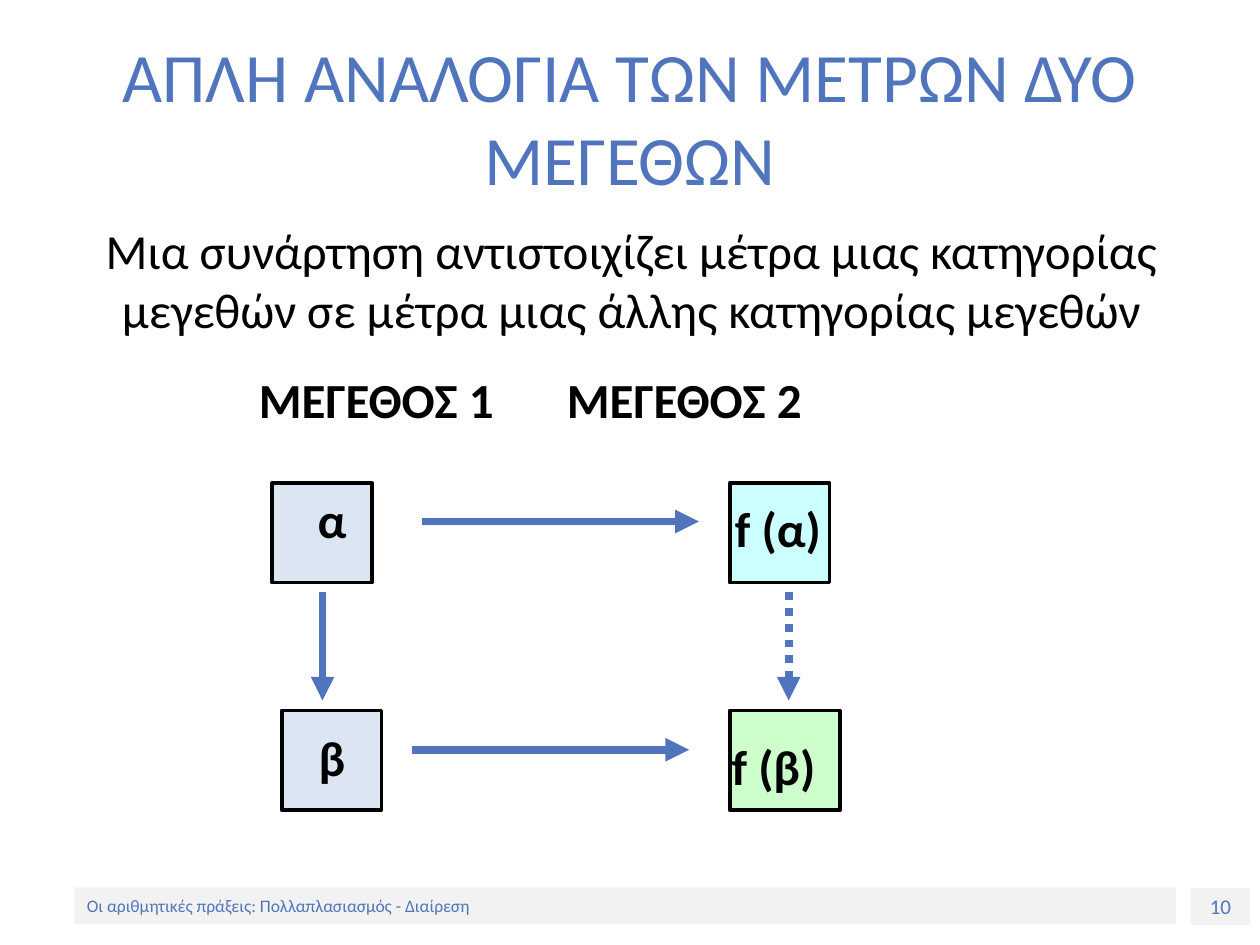
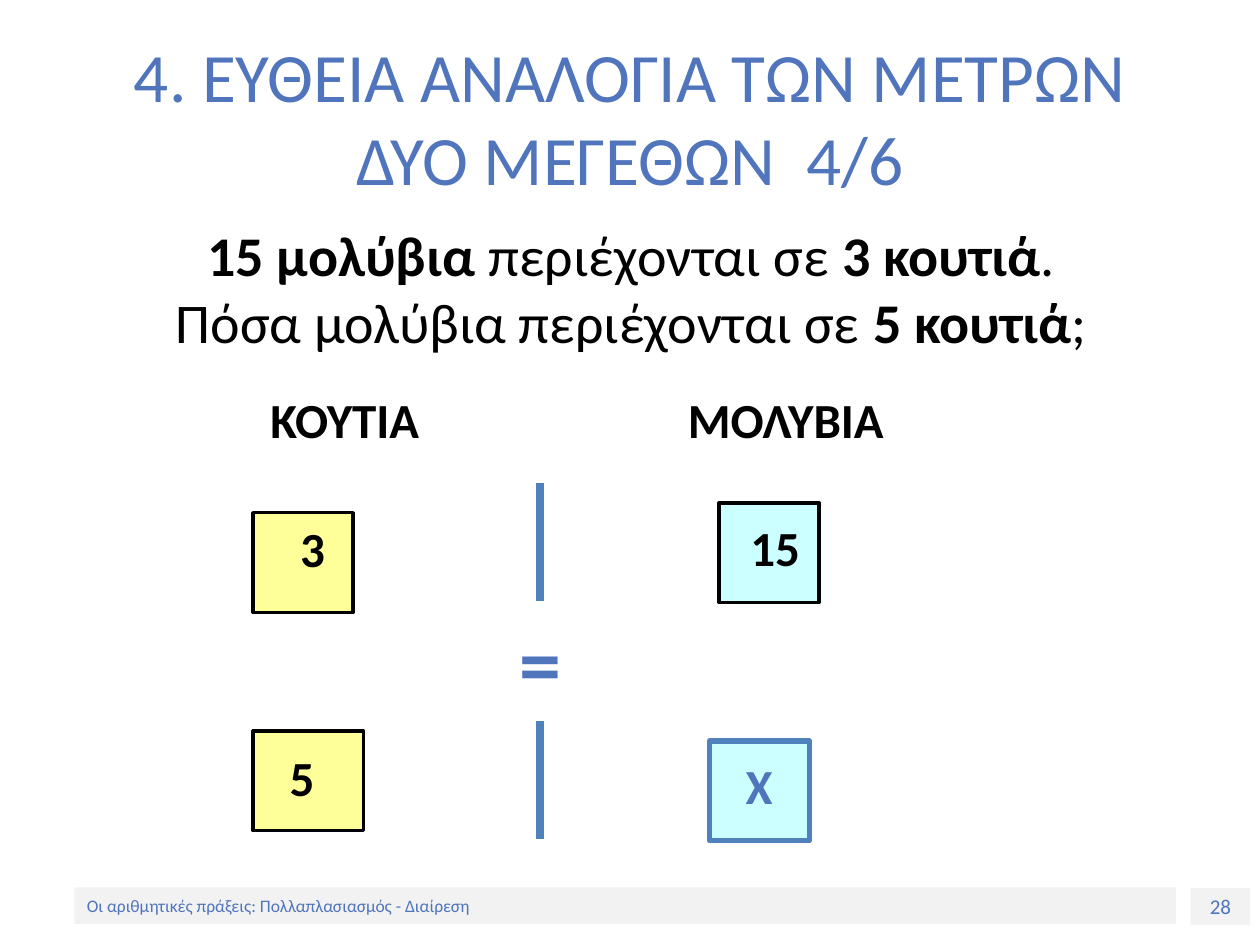
from lxml import etree
from pptx import Presentation
from pptx import util as u
from pptx.dml.color import RGBColor
from pptx.enum import dml, shapes, text
from pptx.oxml.ns import qn

Pt = u.Pt
ACCENT, INK, BAND = "5075BC", "000000", "F2F2F2"
STEEL, PALE, YELLOW, CYAN, GREEN = "4F81BD", "DCE6F2", "FFFF99", "CCFFFF", "CCFFCC"
COURSE = "Οι αριθμητικές πράξεις: Πολλαπλασιασμός - Διαίρεση"
BOX = 57          # side of a value box
LABEL_H = 41      # height of a one-line label


def rgb(value):
    return RGBColor.from_string(value)


class Deck:
    """Shared style plus the slide being filled."""

    font = "Calibri"

    def __init__(self):
        self.prs = Presentation()
        self.prs.slide_width, self.prs.slide_height = Pt(720), Pt(540)
        self.slide = None

    def fill_text(self, frame, lines, size, color, align, anchor):
        """Each line is a plain string or a list of (text, bold) runs."""
        frame.word_wrap = True
        frame.vertical_anchor = anchor
        for i, line in enumerate(lines):
            paragraph = frame.paragraphs[0] if i == 0 else frame.add_paragraph()
            paragraph.alignment = align
            for words, bold in [(line, False)] if isinstance(line, str) else line:
                run = paragraph.add_run()
                run.text = words
                run.font.name, run.font.size, run.font.bold = self.font, Pt(size), bold
                run.font.color.rgb = rgb(color)

    def text(self, area, lines, size, color=INK, anchor=text.MSO_ANCHOR.TOP):
        box = self.slide.shapes.add_textbox(*map(Pt, area))
        self.fill_text(box.text_frame, lines, size, color, text.PP_ALIGN.CENTER, anchor)

    def label(self, center, top, words, size=28, color=INK, width=74):
        self.text((center - width / 2, top, width, LABEL_H), [[(words, True)]], size, color)

    def rect(self, area, fill, line=None, weight=2):
        shape = self.slide.shapes.add_shape(shapes.MSO_SHAPE.RECTANGLE, *map(Pt, area))
        shape.shadow.inherit = False
        shape.fill.solid()
        shape.fill.fore_color.rgb = rgb(fill)
        if line:
            shape.line.color.rgb = rgb(line)
            shape.line.width = Pt(weight)
        else:
            shape.line.fill.background()
        return shape

    def band(self, area, words, size, align):
        self.fill_text(self.rect(area, BAND).text_frame, [words], size, ACCENT,
                       align, text.MSO_ANCHOR.MIDDLE)

    def line(self, start, end, color=ACCENT, arrow=False, dotted=False):
        link = self.slide.shapes.add_connector(
            shapes.MSO_CONNECTOR.STRAIGHT, *map(Pt, (*start, *end)))
        link.line.color.rgb = rgb(color)
        link.line.width = Pt(4.5)
        if dotted:
            link.line.dash_style = dml.MSO_LINE.ROUND_DOT
        properties = link._element.spPr
        if arrow:
            etree.SubElement(properties.find(qn("a:ln")), qn("a:tailEnd"), type="triangle")
        etree.SubElement(properties, qn("a:effectLst"))

    def page(self, title, number, body, body_size):
        """Start a slide with its footer bands, title and body."""
        self.slide = self.prs.slides.add_slide(self.prs.slide_layouts[6])
        self.band((680.4, 507.5, 34, 21), str(number), 12, text.PP_ALIGN.CENTER)
        self.band((42.5, 507, 629.5, 21), COURSE, 10, text.PP_ALIGN.LEFT)
        self.text((36, 21.6, 648, 90), [title], 39.6, ACCENT, text.MSO_ANCHOR.MIDDLE)
        self.text((36.7, 122.4, 648, 356), body, body_size)

    def headings(self, top, columns):
        for center, words in columns:
            self.label(center, top, words, width=180)

    def value(self, left, top, words, center, label_top, fill,
              width=BOX, line=INK, weight=2, color=INK):
        """A coloured box with the quantity it holds."""
        self.rect((left, top, width, BOX), fill, line, weight)
        self.label(center, label_top, words, color=color)


def simple_proportion(deck):
    deck.page("ΑΠΛΗ ΑΝΑΛΟΓΙΑ ΤΩΝ ΜΕΤΡΩΝ ΔΥΟ ΜΕΓΕΘΩΝ", 10,
              ["Μια συνάρτηση αντιστοιχίζει μέτρα μιας κατηγορίας "
               "μεγεθών σε μέτρα μιας άλλης κατηγορίας μεγεθών"], 28)
    deck.headings(207.4, [(215, "ΜΕΓΕΘΟΣ 1"), (391, "ΜΕΓΕΘΟΣ 2")])

    # Measures and their images under f
    upper, lower = 276, 406
    deck.value(155.5, upper, "α", 189.7, 276, PALE)
    deck.value(161, lower, "β", 189.7, 412, PALE)
    deck.value(417, upper, "f (α)", 444.5, 281.5, CYAN)
    deck.value(417, lower, "f (β)", 442, 417.6, GREEN, width=63)

    # Arrows: f runs across, the ratio runs down
    for left, y in ((241, 298), (235.4, 428.4)):
        deck.line((left, y), (left + 158.4, y), arrow=True)
    for x, dotted in ((184.3, False), (450.7, True)):
        deck.line((x, 338.4), (x, 400.3), arrow=True, dotted=dotted)


def direct_proportion(deck):
    deck.page("4. ΕΥΘΕΙΑ ΑΝΑΛΟΓΙΑ ΤΩΝ ΜΕΤΡΩΝ ΔΥΟ ΜΕΓΕΘΩΝ  4/6", 28,
              [[("15 μολύβια ", True), ("περιέχονται σε ", False),
                ("3 κουτιά", True), (".", False)],
               [("Πόσα μολύβια περιέχονται σε ", False),
                ("5 κουτιά", True), (";", False)]], 32)
    deck.headings(219, [(197, "ΚΟΥΤΙΑ"), (449, "ΜΟΛΥΒΙΑ")])

    # Known and unknown quantities
    deck.value(144.7, 293, "3", 178.6, 293, YELLOW)
    deck.value(144.7, 417.6, "5", 172.5, 423.4, YELLOW, width=63)
    deck.value(411, 287.3, "15", 443, 292.3, CYAN)
    deck.value(405.4, 423.4, "Χ", 433.7, 428.4, CYAN,
               line=STEEL, weight=3, color=ACCENT)

    # Divider with the equals sign
    middle = 308.8
    for top in (275.8, 411.8):
        deck.line((middle, top), (middle, top + 67.7), STEEL)
    deck.label(middle, 345.6, "=", 48, ACCENT)


def main():
    deck = Deck()
    simple_proportion(deck)
    direct_proportion(deck)
    deck.prs.save("out.pptx")


if __name__ == "__main__":
    main()
